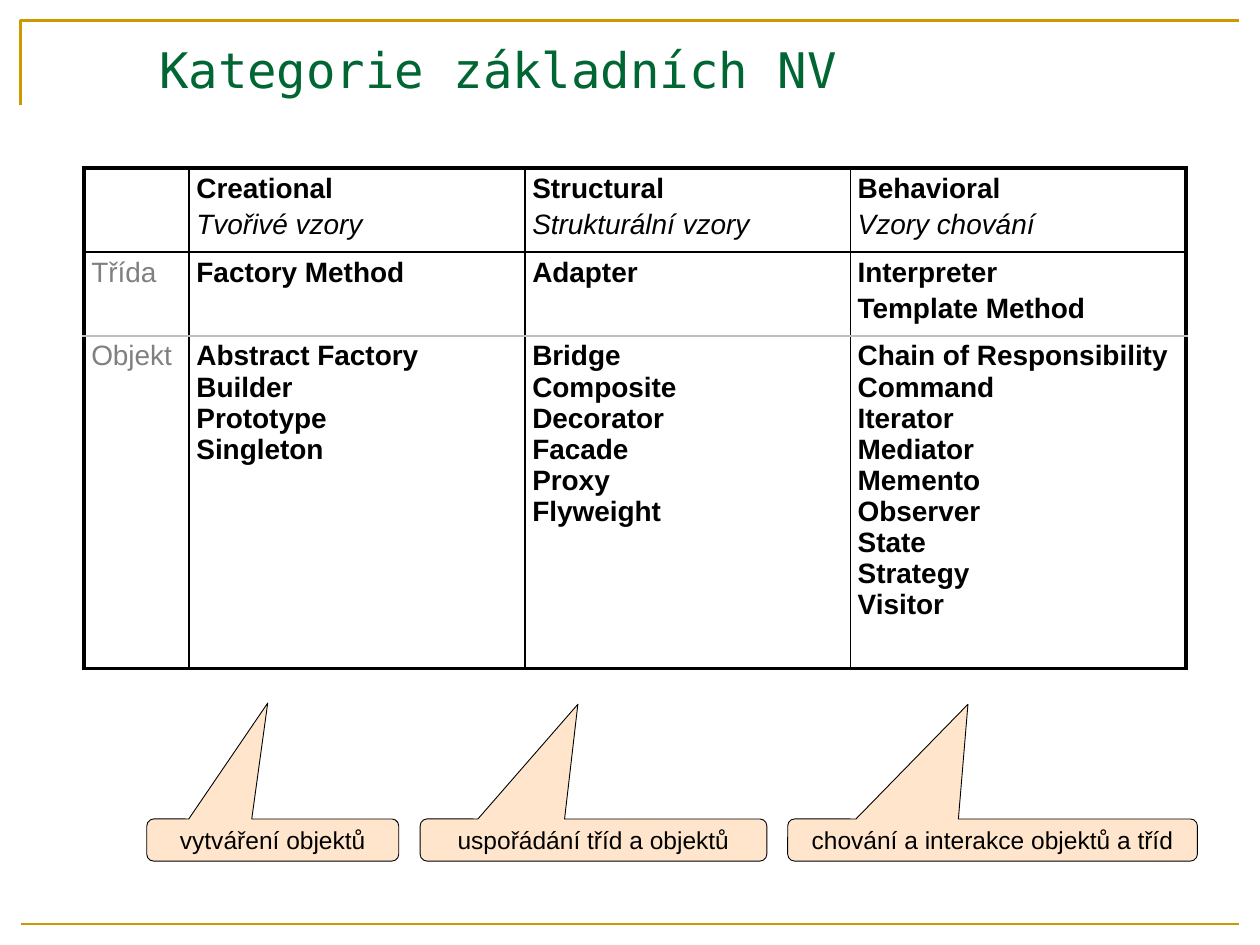
from lxml import etree
from pptx import Presentation
from pptx.dml.color import RGBColor
from pptx.enum.shapes import MSO_CONNECTOR, MSO_SHAPE
from pptx.enum.text import MSO_ANCHOR, PP_ALIGN
from pptx.oxml.ns import qn
from pptx.util import Cm, Pt

STRAIGHT = MSO_CONNECTOR.STRAIGHT
CALLOUT = MSO_SHAPE.ROUNDED_RECTANGULAR_CALLOUT
MIDDLE = MSO_ANCHOR.MIDDLE
LEFT, CENTER = PP_ALIGN.LEFT, PP_ALIGN.CENTER

GOLD = RGBColor(0xCC, 0x99, 0x00)
GREEN = RGBColor(0x00, 0x66, 0x33)
BLACK = RGBColor(0x00, 0x00, 0x00)
GRAY = RGBColor(0x80, 0x80, 0x80)
LIGHT_GRAY = RGBColor(0xBF, 0xBF, 0xBF)
PEACH = RGBColor(0xFF, 0xCC, 0x99)

BODY_FONT = "Arial"
TITLE_FONT = "DejaVu Sans Mono"
INSET_X, INSET_Y = Cm(0.15), Cm(0.1)
FRAME_LEFT, FRAME_RIGHT = Cm(0.42), Cm(24.98)

COLUMN_WIDTHS = [2.12, 6.77, 6.56, 6.77]
ROW_HEIGHTS = [1.69, 1.69, 6.71]

# Each cell is a list of paragraphs
PATTERNS = [
    [[], ["Creational", "Tvořivé vzory"], ["Structural", "Strukturální vzory"],
     ["Behavioral", "Vzory chování"]],
    [["Třída"], ["Factory Method"], ["Adapter"],
     ["Interpreter", "Template Method"]],
    [["Objekt"],
     ["Abstract Factory\vBuilder\vPrototype\vSingleton"],
     ["Bridge\vComposite\vDecorator\vFacade\vProxy\vFlyweight"],
     ["Chain of Responsibility Command\vIterator\vMediator\vMemento\v"
      "Observer\vState\vStrategy\vVisitor"]],
]

# Text, left, width, pointer offset x and y
CALLOUTS = [
    ("vytváření objektů", 2.96, 5.08, -0.02, -3.25),
    ("uspořádání tříd a objektů", 8.47, 6.99, -0.045, -3.22),
    ("chování a interakce objektů a tříd", 15.88, 8.26, -0.06, -3.22),
]


def style_paragraph(paragraph, size, color, font=BODY_FONT, align=LEFT,
                    bold=False, italic=False):
    paragraph.alignment = align
    for run in paragraph.runs:
        run.font.name = font
        run.font.size = Pt(size)
        run.font.color.rgb = color
        run.font.bold = bold
        run.font.italic = italic


def add_frame(slide):
    top = Cm(0.42)
    builder = slide.shapes.build_freeform(FRAME_LEFT, Cm(2.12))
    builder.add_line_segments([(FRAME_LEFT, top), (FRAME_RIGHT, top)], close=False)
    corner = builder.convert_to_shape()
    corner.shadow.inherit = False
    corner.fill.background()

    bottom = Cm(18.63)
    footer = slide.shapes.add_connector(STRAIGHT, FRAME_LEFT, bottom,
                                        FRAME_RIGHT, bottom)
    etree.SubElement(footer._element.spPr, qn("a:effectLst"))
    for edge in (corner, footer):
        edge.line.color.rgb = GOLD
        edge.line.width = Pt(1.5)


def add_title(slide, text):
    title = slide.shapes.add_textbox(Cm(2.96), Cm(0.64), Cm(22.01), Cm(1.48))
    frame = title.text_frame
    frame.word_wrap = True
    frame.vertical_anchor = MIDDLE
    frame.text = text
    style_paragraph(frame.paragraphs[0], 28, GREEN, TITLE_FONT)


def set_border(cell, side, color, width):
    line = etree.SubElement(cell._tc.get_or_add_tcPr(), qn(f"a:ln{side}"),
                            w=str(Pt(width)))
    fill = etree.SubElement(line, qn("a:solidFill"))
    etree.SubElement(fill, qn("a:srgbClr"), val=str(color))


def set_borders(cell, row, column):
    last_row, last_column = len(ROW_HEIGHTS) - 1, len(COLUMN_WIDTHS) - 1
    outer = {"L": column == 0, "R": column == last_column,
             "T": row == 0, "B": row == last_row}
    for side, is_outer in outer.items():
        between_kinds = (row, side) in ((1, "B"), (2, "T"))
        set_border(cell, side, LIGHT_GRAY if between_kinds else BLACK,
                   2.25 if is_outer else 1)


def fill_cell(cell, paragraphs, row, column):
    set_borders(cell, row, column)
    cell.fill.background()
    cell.margin_left = cell.margin_right = INSET_X
    cell.margin_top = cell.margin_bottom = INSET_Y
    for index, text in enumerate(paragraphs):
        frame = cell.text_frame
        paragraph = frame.add_paragraph() if index else frame.paragraphs[0]
        paragraph.text = text
        if index:
            paragraph.space_before = Pt(3)
        translated = row == 0 and index == 1
        style_paragraph(paragraph, 16, BLACK if column else GRAY,
                        bold=column > 0 and not translated, italic=translated)


def add_pattern_table(slide):
    table = slide.shapes.add_table(
        len(ROW_HEIGHTS), len(COLUMN_WIDTHS), Cm(1.69), Cm(3.39),
        Cm(sum(COLUMN_WIDTHS)), Cm(sum(ROW_HEIGHTS))).table
    table.first_row = table.horz_banding = False
    for column, width in zip(table.columns, COLUMN_WIDTHS):
        column.width = Cm(width)
    for row, height in zip(table.rows, ROW_HEIGHTS):
        row.height = Cm(height)
    for row, cells in enumerate(PATTERNS):
        for column, paragraphs in enumerate(cells):
            fill_cell(table.cell(row, column), paragraphs, row, column)


def add_callout(slide, text, left, width, pointer_x, pointer_y):
    callout = slide.shapes.add_shape(CALLOUT, Cm(left), Cm(16.51),
                                     Cm(width), Cm(0.85))
    callout.adjustments[0] = pointer_x
    callout.adjustments[1] = pointer_y
    callout.shadow.inherit = False
    callout.line.color.rgb = BLACK
    callout.line.width = Pt(0.5)
    callout.fill.solid()
    callout.fill.fore_color.rgb = PEACH
    # Half-transparent fill
    color = callout._element.spPr.find(qn("a:solidFill")).find(qn("a:srgbClr"))
    etree.SubElement(color, qn("a:alpha"), val="50000")

    frame = callout.text_frame
    frame.margin_left = frame.margin_right = INSET_X
    frame.margin_top = frame.margin_bottom = INSET_Y
    frame.vertical_anchor = MIDDLE
    frame.text = text
    style_paragraph(frame.paragraphs[0], 14, BLACK, align=CENTER)


def main():
    presentation = Presentation()
    presentation.slide_width = Cm(25.4)
    presentation.slide_height = Cm(19.05)
    slide = presentation.slides.add_slide(presentation.slide_layouts[6])

    add_frame(slide)
    add_title(slide, "Kategorie základních NV")
    add_pattern_table(slide)
    for callout in CALLOUTS:
        add_callout(slide, *callout)

    presentation.save("out.pptx")


if __name__ == "__main__":
    main()
